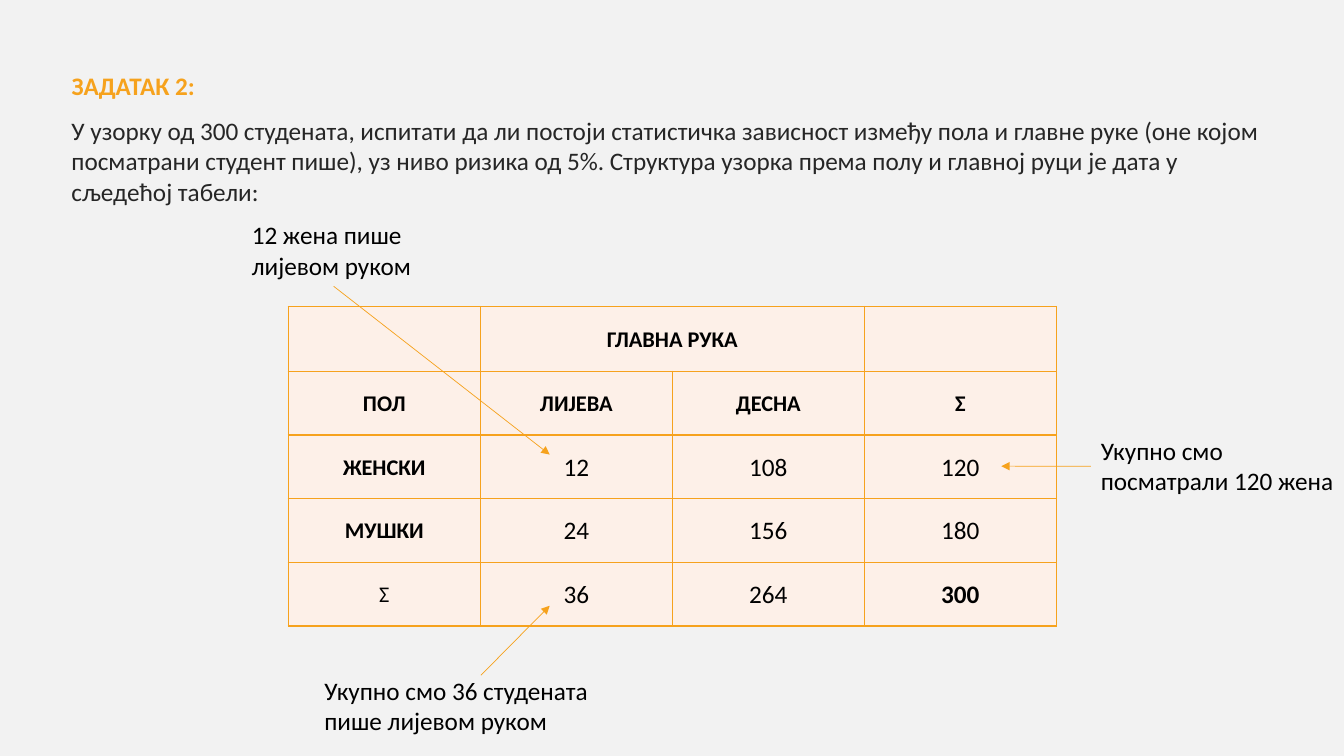
import pptx
import pptx.dml.color
import pptx.enum.shapes
import pptx.enum.text
import pptx.oxml
import pptx.oxml.ns
import pptx.util

RGBColor = pptx.dml.color.RGBColor
ORANGE = RGBColor(0xF6, 0xA2, 0x1D)
CREAM = RGBColor(0xFD, 0xF0, 0xE8)
PALE_GREY = RGBColor(0xF2, 0xF2, 0xF2)
DARK_GREY = RGBColor(0x26, 0x26, 0x26)
BLACK = RGBColor(0, 0, 0)


class TaskSlide:
    font_name = "Calibri"
    text_size = 18
    header_size = 16

    def __init__(self, deck):
        self.width, self.height = deck.slide_width, deck.slide_height
        self.slide = deck.slides.add_slide(deck.slide_layouts[5])
        self.slide.background.fill.solid()
        self.slide.background.fill.fore_color.rgb = PALE_GREY

    def across(self, percent):
        return round(self.width * percent / 100)

    def down(self, percent):
        return round(self.height * percent / 100)

    def box(self, left, top, width, height):
        return self.across(left), self.down(top), self.across(width), self.down(height)

    def set_words(self, frame, words, size, color, bold=False):
        frame.text = words
        for run in frame.paragraphs[0].runs:
            run.font.name = self.font_name
            run.font.size = pptx.util.Pt(size)
            run.font.bold = bold
            run.font.color.rgb = color

    def title(self, words, *place):
        heading = self.slide.shapes.title
        heading.left, heading.top, heading.width, heading.height = self.box(*place)
        frame = heading.text_frame
        frame.vertical_anchor = pptx.enum.text.MSO_ANCHOR.TOP
        frame.auto_size = pptx.enum.text.MSO_AUTO_SIZE.NONE
        self.set_words(frame, words, self.text_size, ORANGE, True)
        frame.paragraphs[0].alignment = pptx.enum.text.PP_ALIGN.LEFT

    def text(self, words, *place, color=BLACK):
        note = self.slide.shapes.add_textbox(*self.box(*place))
        note.text_frame.word_wrap = True
        note.text_frame.auto_size = pptx.enum.text.MSO_AUTO_SIZE.SHAPE_TO_FIT_TEXT
        self.set_words(note.text_frame, words, self.text_size, color)
        return note

    def arrow(self, start, end, source=None, side=1):
        pointer = self.slide.shapes.add_connector(
            pptx.enum.shapes.MSO_CONNECTOR.STRAIGHT,
            self.across(start[0]), self.down(start[1]),
            self.across(end[0]), self.down(end[1]))
        if source is not None:
            pointer.begin_connect(source, side)
        pointer.line.color.rgb = ORANGE
        pointer.line.width = pptx.util.Pt(0.5)
        namespace = pptx.oxml.ns.nsdecls("a")
        pointer.line._get_or_add_ln().append(
            pptx.oxml.parse_xml(f'<a:tailEnd {namespace} type="triangle"/>'))
        pointer._element.spPr.append(pptx.oxml.parse_xml(f"<a:effectLst {namespace}/>"))

    def border(self, cell):
        properties = cell._tc.get_or_add_tcPr()
        for edge in ("lnL", "lnR", "lnT", "lnB"):
            properties.append(pptx.oxml.parse_xml(
                f'<a:{edge} {pptx.oxml.ns.nsdecls("a")} w="{pptx.util.Pt(1)}">'
                f'<a:solidFill><a:srgbClr val="{ORANGE}"/></a:solidFill></a:{edge}>'))

    def table(self, rows, row_heights, *place):
        grid = self.slide.shapes.add_table(len(rows), len(rows[0]), *self.box(*place)).table
        grid.first_row = grid.horz_banding = False
        for row, height in zip(grid.rows, row_heights):
            row.height = self.down(height)
        for r, words_in_row in enumerate(rows):
            for c, words in enumerate(words_in_row):
                self.cell(grid.cell(r, c), words, r < 2 or words in ("ЖЕНСКИ", "МУШКИ", "300"))
        return grid

    def cell(self, cell, words, bold):
        self.border(cell)
        cell.fill.solid()
        cell.fill.fore_color.rgb = CREAM
        cell.vertical_anchor = pptx.enum.text.MSO_ANCHOR.MIDDLE
        cell.margin_left = cell.margin_right = cell.margin_top = pptx.util.Inches(0.01)
        cell.margin_bottom = 0
        size = self.text_size if words.isdigit() else self.header_size
        self.set_words(cell.text_frame, words, size, BLACK, bold)
        cell.text_frame.paragraphs[0].alignment = pptx.enum.text.PP_ALIGN.CENTER


def main():
    deck = pptx.Presentation()
    deck.slide_width = pptx.util.Inches(13.33)
    deck.slide_height = pptx.util.Inches(7.5)
    task = TaskSlide(deck)

    task.title("ЗАДАТАК 2:", 4.58, 8.6, 90.2, 5.4)
    task.text(
        "У узорку од 300 студената, испитати да ли постоји статистичка зависност "
        "између пола и главне руке (оне којом посматрани студент пише), уз ниво ризика "
        "од 5%. Структура узорка према полу и главној руци је дата у сљедећој табели:",
        4.58, 14.6, 90.2, 13.4, color=DARK_GREY)

    counts = task.table([
        ["", "ГЛАВНА РУКА", "", ""],
        ["ПОЛ", "ЛИЈЕВА", "ДЕСНА", "Σ"],
        ["ЖЕНСКИ", "12", "108", "120"],
        ["МУШКИ", "24", "156", "180"],
        ["Σ", "36", "264", "300"],
    ], [8.6] + [8.42] * 4, 21.45, 40.53, 57.15, 42.28)
    counts.cell(0, 1).merge(counts.cell(0, 2))

    task.text("12 жена пише лијевом руком", 18, 28.4, 16.05, 9.47)
    task.arrow((24.83, 37.87), (40.9, 60.13))
    women_total = task.text("Укупно смо посматрали 120 жена", 81.17, 56.93, 18.83, 9.47)
    task.arrow((81.17, 61.66), (74.5, 61.66), source=women_total)
    task.text("Укупно смо 36 студената пише лијевом руком", 23.4, 88.67, 22.28, 9.47)
    task.arrow((35.78, 89.33), (40.9, 80.13))

    deck.save("out.pptx")


if __name__ == "__main__":
    main()
